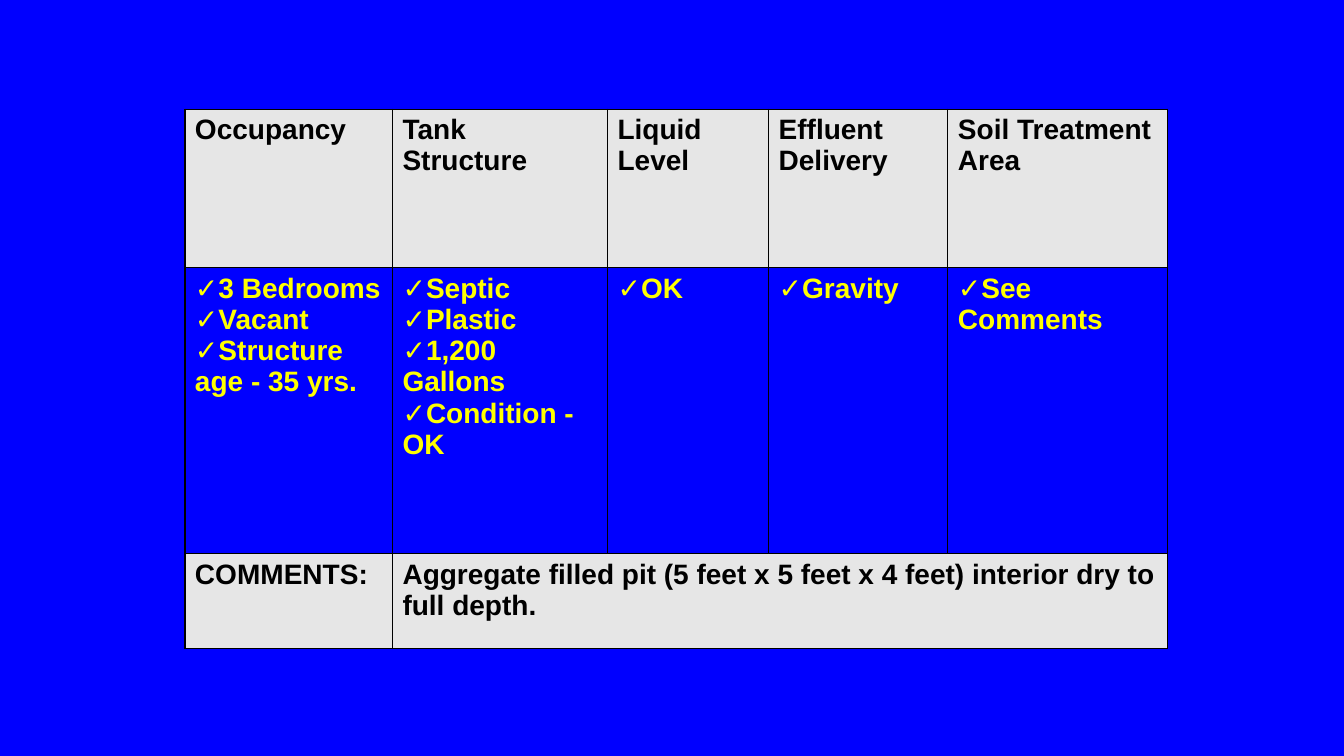
from pptx import Presentation
from pptx.dml.color import RGBColor
from pptx.oxml.ns import qn
from pptx.util import Cm, Pt
from lxml.etree import SubElement

# Content
HEADINGS = ["Occupancy", "Tank Structure", "Liquid Level",
            "Effluent Delivery", "Soil Treatment Area"]
FINDINGS = [
    ["3 Bedrooms", "Vacant", "Structure age - 35 yrs."],
    ["Septic", "Plastic", "1,200 Gallons", "Condition - OK"],
    ["OK"],
    ["Gravity"],
    ["See Comments"],
]
COMMENTS = ["COMMENTS:", "Aggregate filled pit (5 feet x 5 feet x 4 feet) "
            "interior dry to full depth."]

# Layout in centimetres
SLIDE = (33.87, 19.05)
LEFT, TOP = 4.66, 2.75
COLUMNS = [5.23, 5.42, 4.06, 4.52, 5.54]
ROWS = [4, 7.2, 2.4]
BLUE, GREY, BLACK, YELLOW = "0000FF", "E6E6E6", "000000", "FFFF00"
FONT = "Arial"


def paint(fill, color):
    fill.solid()
    fill.fore_color.rgb = RGBColor.from_string(color)


def add_borders(cell, color=BLACK, width=Pt(1)):
    properties = cell._tc.get_or_add_tcPr()
    for side in ("a:lnL", "a:lnR", "a:lnT", "a:lnB"):
        line = SubElement(properties, qn(side), w=str(width))
        solid = SubElement(line, qn("a:solidFill"))
        SubElement(solid, qn("a:srgbClr"), val=color)


def add_check(para):
    properties = para._p.get_or_add_pPr()
    properties.set("marL", "0")
    properties.set("indent", "0")
    SubElement(properties, qn("a:buFont"), typeface=FONT)
    SubElement(properties, qn("a:buChar"), char="✓")
    tabs = SubElement(properties, qn("a:tabLst"))
    SubElement(tabs, qn("a:tab"), pos=str(Cm(0.635)), algn="l")


def write(cell, lines, color=BLACK, checked=False, size=20):
    frame = cell.text_frame
    for index, text in enumerate(lines):
        para = frame.add_paragraph() if index else frame.paragraphs[0]
        if checked:
            add_check(para)
        span = para.add_run()
        span.text = text
        span.font.name, span.font.size, span.font.bold = FONT, Pt(size), True
        span.font.color.rgb = RGBColor.from_string(color)


# Slide
deck = Presentation()
deck.slide_width, deck.slide_height = map(Cm, SLIDE)
slide = deck.slides.add_slide(deck.slide_layouts[6])
paint(slide.background.fill, BLUE)

# Table grid
table = slide.shapes.add_table(
    len(ROWS), len(COLUMNS), Cm(LEFT), Cm(TOP),
    Cm(sum(COLUMNS)), Cm(sum(ROWS))).table
table.first_row = table.horz_banding = False
for column, width in zip(table.columns, COLUMNS):
    column.width = Cm(width)
for row, height in zip(table.rows, ROWS):
    row.height = Cm(height)
table.cell(2, 1).merge(table.cell(2, len(COLUMNS) - 1))

# Borders and fills
for number, row in enumerate(table.rows):
    for cell in row.cells:
        add_borders(cell)
        if number == 1:
            cell.fill.background()
        else:
            paint(cell.fill, GREY)

# Text
for number, (heading, findings) in enumerate(zip(HEADINGS, FINDINGS)):
    write(table.cell(0, number), [heading])
    write(table.cell(1, number), findings, color=YELLOW, checked=True)
for number, comment in enumerate(COMMENTS):
    write(table.cell(2, number), [comment])

deck.save("out.pptx")
